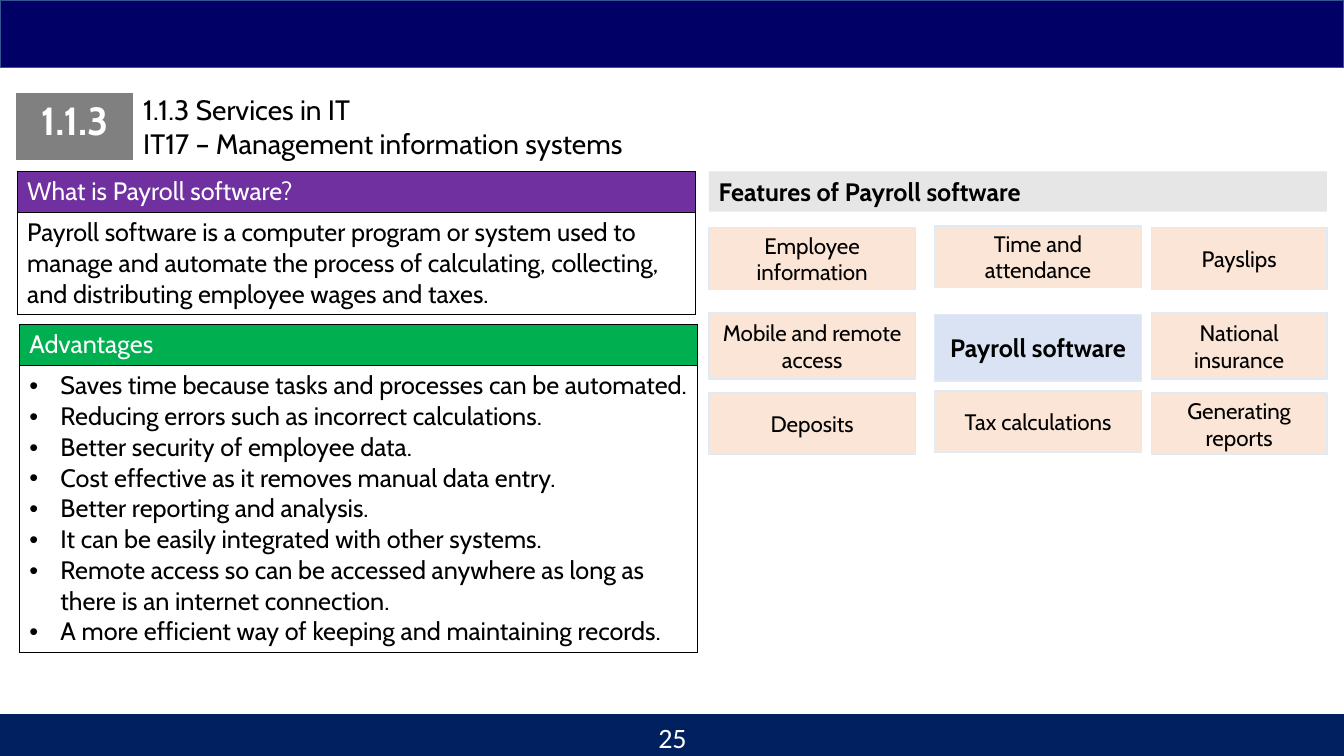
"""Build the payroll software slide."""
from dataclasses import dataclass
from typing import NamedTuple

from lxml.etree import SubElement
from pptx import Presentation
from pptx.dml.color import RGBColor
from pptx.enum.shapes import MSO_SHAPE as Shape
from pptx.enum.text import MSO_ANCHOR as Anchor, MSO_AUTO_SIZE as AutoSize, PP_ALIGN as Align
from pptx.oxml.ns import qn
from pptx.util import Emu, Pt

EMU_PER_PX = 9144


@dataclass(frozen=True)
class Theme:
    """Colours, fonts and type sizes of the slide."""
    font: str = "Cabin"
    number_font: str = "Calibri"
    black: str = "000000"
    white: str = "FFFFFF"
    banner: str = "000066"
    banner_line: str = "325491"
    footer: str = "002060"
    badge: str = "808080"
    question: str = "7030A0"
    advantages: str = "00B050"
    heading: str = "E7E6E6"
    feature: str = "FBE5D6"
    hub: str = "DAE3F3"
    tile_line: str = "DEEBF7"
    feature_size: int = 16
    body_size: int = 18
    title_size: int = 20
    badge_size: int = 28


THEME = Theme()


class Box(NamedTuple):
    """Left, top, width and height in px."""
    left: int
    top: int
    width: int
    height: int

    def emu(self) -> list[Emu]:
        """Return the four lengths in EMU."""
        return [Emu(length * EMU_PER_PX) for length in self]


class Style(NamedTuple):
    """Look of a piece of text."""
    size: int
    color: str = THEME.black
    bold: bool = False
    align: Align = Align.LEFT
    font: str = THEME.font


class Panel(NamedTuple):
    """A coloured heading over a text cell."""
    box: Box
    heading: str
    fill: str
    lines: list[str]
    bulleted: bool


class Track(NamedTuple):
    """Start and length of a grid row or column in px."""
    start: int
    length: int


PANELS = [
    Panel(Box(17, 170, 673, 140), "What is Payroll software?", THEME.question, [
        "Payroll software is a computer program or system used to manage and automate the process "
        "of calculating, collecting, and distributing employee wages and taxes.",
    ], False),
    Panel(Box(19, 322, 673, 320), "Advantages", THEME.advantages, [
        "Saves time because tasks and processes can be automated.",
        "Reducing errors such as incorrect calculations.",
        "Better security of employee data.",
        "Cost effective as it removes manual data entry.",
        "Better reporting and analysis.",
        "It can be easily integrated with other systems.",
        "Remote access so can be accessed anywhere as long as there is an internet connection.",
        "A more efficient way of keeping and maintaining records.",
    ], True),
]
PANEL_HEADING_HEIGHT = 40
BULLET_INDENT = 31

HUB = "Payroll software"
FEATURES = [
    ["Employee information", "Time and attendance", "Payslips"],
    ["Mobile and remote access", HUB, "National insurance"],
    ["Deposits", "Tax calculations", "Generating reports"],
]
COLUMNS = [Track(703, 205), Track(927, 205), Track(1142, 174)]
ROWS = [Track(226, 61), Track(310, 66), Track(390, 61)]
MIDDLE_NUDGES = [-2, 2, -2]


def write(frame, lines: list[str], style: Style) -> None:
    """Fill a text frame and format its runs."""
    frame.text = "\n".join(lines)
    for para in frame.paragraphs:
        para.alignment = style.align
        for span in para.runs:
            span.font.name = style.font
            span.font.size = Pt(style.size)
            span.font.bold = style.bold
            span.font.color.rgb = RGBColor.from_string(style.color)


def add_bullet(para) -> None:
    """Give a paragraph a hanging round bullet."""
    properties = para._p.get_or_add_pPr()
    indent = BULLET_INDENT * EMU_PER_PX
    properties.set("marL", str(indent))
    properties.set("indent", str(-indent))
    SubElement(properties, qn("a:buFont"), typeface="Arial")
    SubElement(properties, qn("a:buChar"), char="•")


def draw_rectangle(page, box: Box, fill: str, line: str | None = None):
    """Draw a flat rectangle."""
    shape = page.shapes.add_shape(Shape.RECTANGLE, *box.emu())
    shape.shadow.inherit = False
    shape.fill.solid()
    shape.fill.fore_color.rgb = RGBColor.from_string(fill)
    if line:
        shape.line.color.rgb = RGBColor.from_string(line)
        shape.line.width = Pt(1)
    else:
        shape.line.fill.background()
    return shape


def draw_table(page, box: Box, rows: int, columns: int):
    """Draw a table without header or banding."""
    table = page.shapes.add_table(rows, columns, *box.emu()).table
    table.first_row = False
    table.horz_banding = False
    return table


def paint_cell(cell, fill: str | None, border: str) -> None:
    """Set the borders and the fill of a cell."""
    properties = cell._tc.get_or_add_tcPr()
    for side in ("lnL", "lnR", "lnT", "lnB"):
        line = SubElement(properties, qn(f"a:{side}"), w=str(Pt(1)))
        paint = SubElement(line, qn("a:solidFill"))
        SubElement(paint, qn("a:srgbClr"), val=border)
    if fill:
        cell.fill.solid()
        cell.fill.fore_color.rgb = RGBColor.from_string(fill)
    else:
        cell.fill.background()


def draw_title(page) -> None:
    """Place the title beside its numbered badge."""
    title = page.shapes.title
    title.left, title.top, title.width, title.height = Box(132, 87, 603, 77).emu()
    frame = title.text_frame
    frame.auto_size = AutoSize.NONE
    frame.vertical_anchor = Anchor.TOP
    write(frame, ["1.1.3 Services in IT", "IT17 – Management information systems"],
          Style(THEME.title_size))
    badge = draw_table(page, Box(15, 92, 118, 67), 1, 1).cell(0, 0)
    paint_cell(badge, THEME.badge, THEME.white)
    write(badge.text_frame, ["1.1.3"], Style(THEME.badge_size, THEME.white, True, Align.CENTER))


def draw_panel(page, panel: Panel) -> None:
    """Draw a heading and its text as a two-row table."""
    table = draw_table(page, panel.box, 2, 1)
    table.rows[0].height = Emu(PANEL_HEADING_HEIGHT * EMU_PER_PX)
    table.rows[1].height = Emu((panel.box.height - PANEL_HEADING_HEIGHT) * EMU_PER_PX)
    heading, body = table.cell(0, 0), table.cell(1, 0)
    paint_cell(heading, panel.fill, THEME.black)
    paint_cell(body, None, THEME.black)
    write(heading.text_frame, [panel.heading], Style(THEME.body_size, THEME.white))
    write(body.text_frame, panel.lines, Style(THEME.body_size))
    if panel.bulleted:
        for para in body.text_frame.paragraphs:
            add_bullet(para)


def draw_features(page) -> None:
    """Draw the feature heading and the tiles around the hub."""
    heading = draw_rectangle(page, Box(703, 170, 613, 40), THEME.heading)
    heading.text_frame.vertical_anchor = Anchor.TOP
    write(heading.text_frame, ["Features of Payroll software"], Style(THEME.body_size, bold=True))
    for row, labels, nudge in zip(ROWS, FEATURES, MIDDLE_NUDGES):
        for column, label, shift in zip(COLUMNS, labels, (0, nudge, 0)):
            is_hub = label == HUB
            box = Box(column.start, row.start + shift, column.length, row.length)
            tile = draw_rectangle(page, box, THEME.hub if is_hub else THEME.feature, THEME.tile_line)
            tile.text_frame.vertical_anchor = Anchor.MIDDLE
            size = THEME.body_size if is_hub else THEME.feature_size
            write(tile.text_frame, [label], Style(size, bold=is_hub, align=Align.CENTER))


def draw_footer(page) -> None:
    """Draw the footer band and the page number."""
    for cell in draw_table(page, Box(0, 709, 1333, 41), 1, 3).iter_cells():
        paint_cell(cell, THEME.footer, THEME.footer)
    number = page.shapes.add_textbox(*Box(517, 710, 300, 40).emu())
    number.text_frame.word_wrap = True
    write(number.text_frame, ["25"],
          Style(THEME.title_size, THEME.white, align=Align.CENTER, font=THEME.number_font))


def main() -> None:
    """Build and save the deck."""
    deck = Presentation()
    deck.slide_width, deck.slide_height = Box(0, 0, 1333, 750).emu()[2:]
    page = deck.slides.add_slide(deck.slide_layouts[5])
    draw_rectangle(page, Box(0, 0, 1333, 67), THEME.banner, THEME.banner_line)
    draw_title(page)
    for panel in PANELS:
        draw_panel(page, panel)
    draw_features(page)
    draw_footer(page)
    deck.save("out.pptx")


if __name__ == "__main__":
    main()
